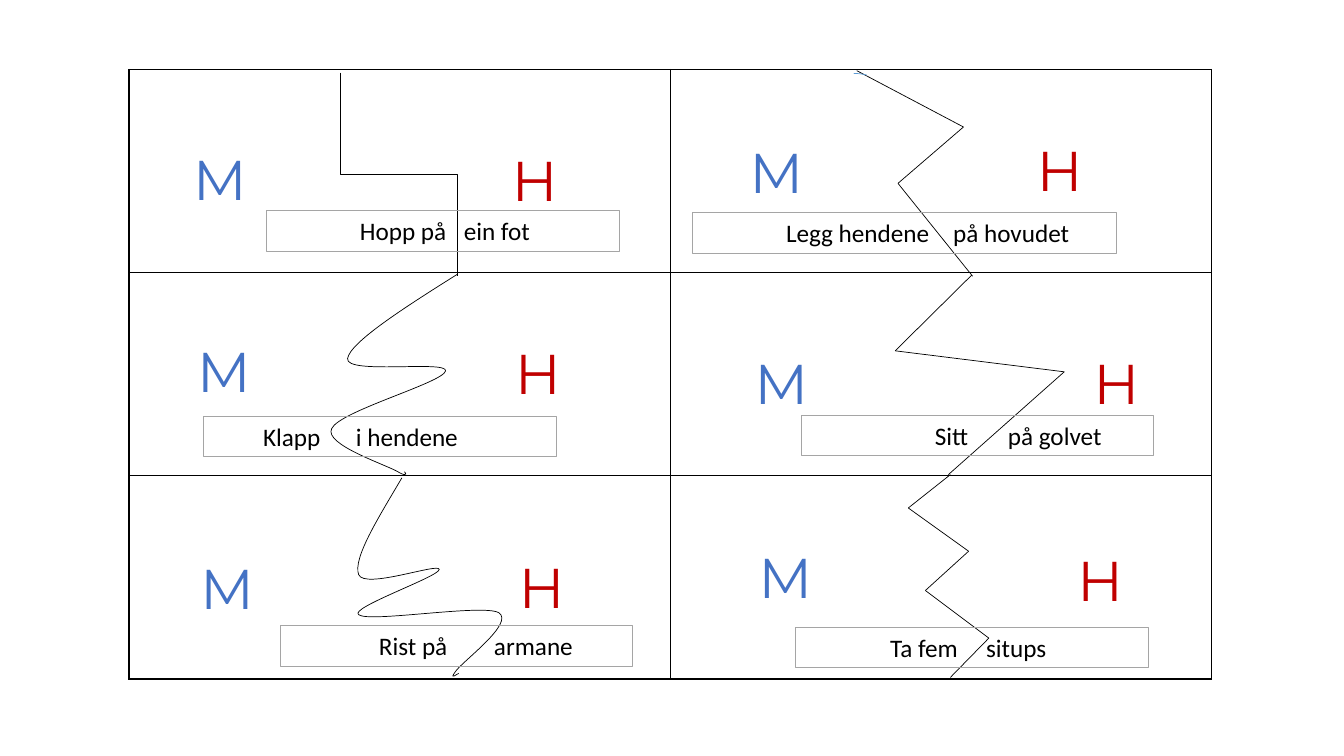
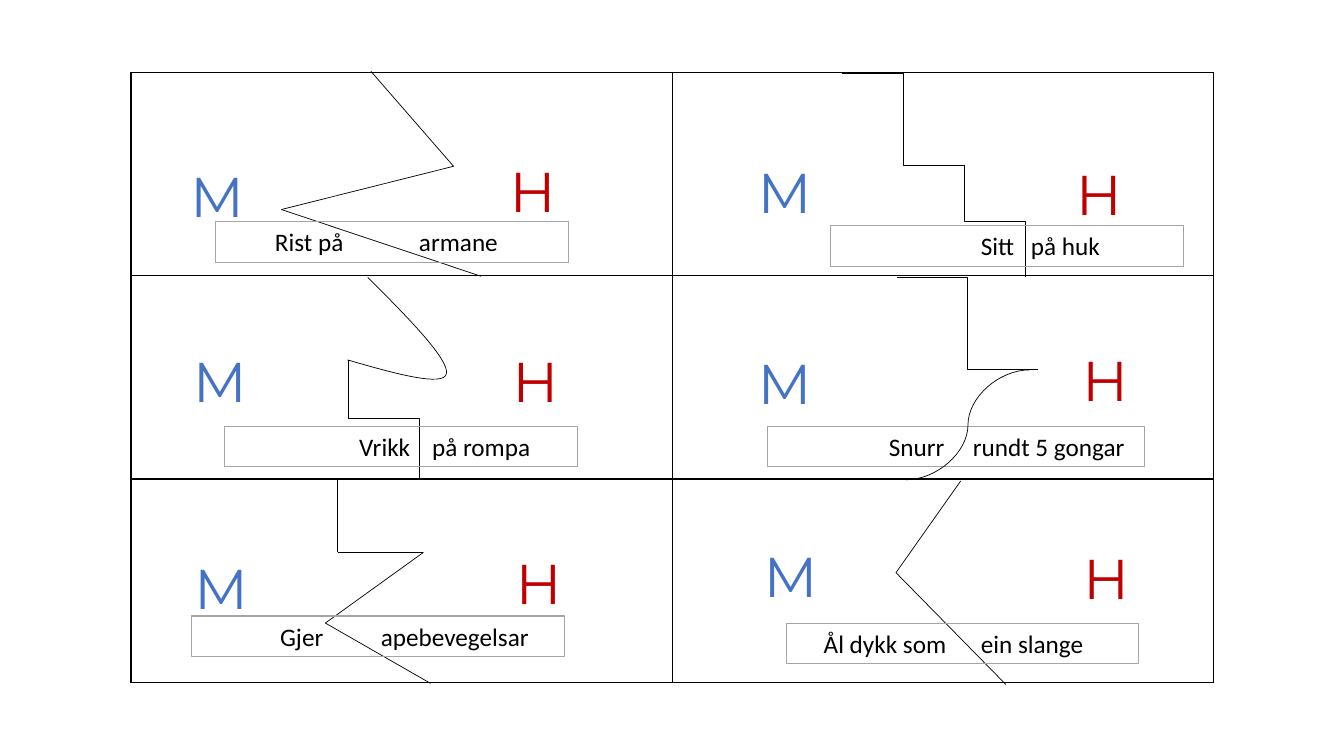
from dataclasses import dataclass

from lxml import etree
from pptx import Presentation
from pptx.dml.color import RGBColor
from pptx.enum.shapes import MSO_CONNECTOR, MSO_SHAPE
from pptx.enum.text import MSO_ANCHOR, MSO_AUTO_SIZE, PP_ALIGN
from pptx.oxml.ns import qn
from pptx.util import Cm, Pt

STRAIGHT, ELBOW, CURVE = MSO_CONNECTOR.STRAIGHT, MSO_CONNECTOR.ELBOW, MSO_CONNECTOR.CURVE
RECTANGLE, ARC = MSO_SHAPE.RECTANGLE, MSO_SHAPE.ARC
TOP, LEFT, FIT_SHAPE = MSO_ANCHOR.TOP, PP_ALIGN.LEFT, MSO_AUTO_SIZE.SHAPE_TO_FIT_TEXT
BLACK, BLUE, RED, GREY, LIGHT_BLUE = "000000", "4472C4", "C00000", "A5A5A5", "5B9BD5"
COLUMN_WIDTH, ROW_HEIGHT = 13.64, 5.12
LETTER_HEIGHT, M_WIDTH, H_WIDTH = 1.96, 3.05, 2.26
CAPTION_HEIGHT = 1.02
QUARTER_TURN_BACK = "16200000"


@dataclass
class Card:
    """One puzzle card: two letters and a caption that the cut line divides."""
    m_at: tuple
    h_at: tuple
    caption_at: tuple
    words: tuple
    words_at: tuple
    width: float = 8.89
    line_width: float = 0.5


FIRST_CARDS = [
    Card((4.62, 3.51), (12.65, 3.53), (6.71, 5.31), ("Hopp på", "ein fot"), (9.07, 11.69)),
    Card((18.64, 3.35), (25.88, 3.3), (17.45, 5.36), ("Legg hendene", "på hovudet"),
         (19.81, 24.02), width=10.69),
    Card((4.72, 8.36), (12.73, 8.41), (5.13, 10.49), ("Klapp", "i hendene"), (6.63, 8.97)),
    Card((18.77, 8.66), (27.31, 8.66), (20.19, 10.46), ("Sitt", "på golvet"), (23.56, 25.4)),
    Card((4.8, 13.82), (12.83, 13.79), (7.06, 15.77), ("Rist på", "armane"), (9.55, 12.45)),
    Card((18.87, 13.54), (26.9, 13.61), (20.04, 15.8), ("Ta fem", "situps"), (22.43, 24.85)),
]
SECOND_CARDS = [
    Card((4.55, 3.94), (12.6, 3.81), (5.44, 5.59), ("Rist på", "armane"), (6.93, 10.56)),
    Card((18.85, 3.84), (26.87, 3.89), (20.93, 5.69), ("Sitt", "på huk"), (24.72, 25.98)),
    Card((4.62, 8.61), (12.67, 8.61), (5.66, 10.74), ("Vrikk", "på rompa"), (9.05, 10.89)),
    Card((18.85, 8.66), (27.03, 8.59), (19.33, 10.74), ("Snurr", "rundt 5 gongar"),
         (22.4, 24.52), width=9.5),
    Card((4.65, 13.82), (12.75, 13.69), (4.83, 15.52), ("Gjer", "apebevegelsar"),
         (7.06, 9.6), width=9.4, line_width=1),
    Card((19, 13.51), (27.05, 13.56), (19.81, 15.7), ("Ål dykk som", "ein slange"),
         (20.76, 24.72)),
]
FIRST_ZIGZAGS = [
    [(21.59, 1.78), (24.28, 3.2), (22.63, 4.62), (24.51, 6.96)],
    [(24.49, 6.93), (22.56, 8.84), (26.82, 9.37), (23.9, 11.96)],
    [(23.95, 11.96), (22.89, 12.8), (24.41, 13.89), (23.32, 14.88), (24.92, 16.08),
     (23.95, 17.07)],
]
SECOND_ZIGZAGS = [
    [(9.35, 1.8), (11.43, 4.19), (7.09, 5.28), (12.12, 6.96)],
    [(8.51, 12.09), (8.51, 13.92), (10.67, 13.92), (8.2, 15.7), (10.85, 17.22)],
    [(24.21, 12.12), (22.58, 14.43), (25.35, 17.25)],
]
FIRST_WAVES = [
    [(11.53, 6.91), (10.16, 7.77), (8.81, 8.64), (8.76, 9.04),
     (8.71, 9.45), (11.3, 9.07), (11.23, 9.35),
     (11.15, 9.65), (8.56, 10.36), (8.36, 10.8),
     (8.15, 11.2), (9.73, 11.71), (10.03, 11.89),
     (10.34, 12.07), (10.19, 11.86), (10.19, 11.89)],
    [(10.13, 12.04), (9.53, 13.06), (8.89, 14.07), (9.04, 14.48),
     (9.19, 14.86), (11.07, 14.17), (11.07, 14.35),
     (11.07, 14.53), (8.79, 15.32), (9.04, 15.49),
     (9.3, 15.7), (12.17, 15.21), (12.57, 15.44),
     (12.98, 15.7), (11.66, 16.66), (11.48, 16.92),
     (11.3, 17.17), (11.53, 16.97), (11.56, 16.97)],
]
SECOND_WAVES = [
    [(9.27, 6.99), (10.31, 8.03), (11.33, 9.07), (11.25, 9.42),
     (11.18, 9.75), (9.96, 9.42), (8.76, 9.07)],
]


def color(hex_code):
    """Turn a hex string into a colour."""
    return RGBColor.from_string(hex_code)


def set_line(line, hex_code=BLACK, width=0.5):
    """Give a line its colour and width."""
    line.color.rgb = color(hex_code)
    line.width = Pt(width)


def set_outline_only(shape, hex_code=BLACK, width=0.5):
    """Leave a shape without fill or shadow and draw its outline."""
    shape.shadow.inherit = False
    shape.fill.background()
    set_line(shape.line, hex_code, width)


def set_border(cell):
    """Draw a thin black border on all sides of a cell."""
    properties = cell._tc.get_or_add_tcPr()
    for index, side in enumerate(("a:lnL", "a:lnR", "a:lnT", "a:lnB")):
        border = etree.Element(qn(side), w=str(Pt(1)))
        fill = etree.SubElement(border, qn("a:solidFill"))
        etree.SubElement(fill, qn("a:srgbClr"), val=BLACK)
        properties.insert(index, border)


def add_grid(slide, left, top):
    """Add the table that frames the six cards."""
    frame = slide.shapes.add_table(3, 2, Cm(left), Cm(top),
                                   Cm(2 * COLUMN_WIDTH), Cm(3 * ROW_HEIGHT))
    table = frame.table
    table.first_row = table.horz_banding = False
    for cell in table.iter_cells():
        cell.fill.background()
        set_border(cell)


def add_line(slide, kind, start, end):
    """Add a thin black connector."""
    connector = slide.shapes.add_connector(kind, *map(Cm, start + end))
    set_line(connector.line)
    etree.SubElement(connector._element.spPr, qn("a:effectLst"))
    return connector


def add_zigzag(slide, points):
    """Join points with straight lines."""
    for start, end in zip(points, points[1:]):
        add_line(slide, STRAIGHT, start, end)


def add_vertical_elbow(slide, start, end):
    """Add an elbow that leaves downwards, as a turned connector."""
    middle_x, middle_y = (start[0] + end[0]) / 2, (start[1] + end[1]) / 2
    half_width, half_height = (end[0] - start[0]) / 2, (end[1] - start[1]) / 2
    connector = add_line(slide, ELBOW,
                         (middle_x + half_height, middle_y - half_width),
                         (middle_x - half_height, middle_y + half_width))
    connector._element.spPr.find(qn("a:xfrm")).set("rot", QUARTER_TURN_BACK)


def add_wave(slide, points):
    """Add a freeform of cubic curves, three points to each curve."""
    start, *others = [(Cm(x), Cm(y)) for x, y in points]
    builder = slide.shapes.build_freeform(*start)
    builder.add_line_segments(others, close=False)
    shape = builder.convert_to_shape()
    set_outline_only(shape)
    outline = next(shape._element.iter(qn("a:path")))
    segments = outline.findall(qn("a:lnTo"))
    for index in range(0, len(segments), 3):
        curve = etree.SubElement(outline, qn("a:cubicBezTo"))
        for segment in segments[index:index + 3]:
            curve.append(segment[0])
            outline.remove(segment)


def add_arc(slide):
    """Add the short blue arc at the top of the first slide."""
    arc = slide.shapes.add_shape(ARC, Cm(19.76), Cm(1.85), Cm(3.51), Cm(4.85))
    arc.adjustments[0], arc.adjustments[1] = 162, 166.78
    set_outline_only(arc, LIGHT_BLUE)


def write_text(shape, text, font_name, size, hex_code):
    """Write one left-aligned paragraph and return it."""
    frame = shape.text_frame
    frame.word_wrap = True
    frame.auto_size = FIT_SHAPE
    frame.vertical_anchor = TOP
    paragraph = frame.paragraphs[0]
    paragraph.text = text
    paragraph.alignment = LEFT
    paragraph.font.name = font_name
    paragraph.font.size = Pt(size)
    paragraph.font.color.rgb = color(hex_code)
    return paragraph


def add_letter(slide, letter, position, width, hex_code):
    """Add one large letter."""
    box = slide.shapes.add_textbox(*map(Cm, position), Cm(width), Cm(LETTER_HEIGHT))
    write_text(box, letter, "Montserrat", 40, hex_code)


def add_caption(slide, card):
    """Add the framed caption, with a tab stop across the cut line."""
    shape = slide.shapes.add_shape(RECTANGLE, *map(Cm, card.caption_at),
                                   Cm(card.width), Cm(CAPTION_HEIGHT))
    set_outline_only(shape, GREY, card.line_width)
    first, second = card.words_at
    shape.text_frame.margin_left = Cm(first - card.caption_at[0])
    shape.text_frame.margin_right = 0
    paragraph = write_text(shape, "\t".join(card.words), "Calibri", 18, BLACK)
    tabs = etree.Element(qn("a:tabLst"))
    etree.SubElement(tabs, qn("a:tab"), pos=str(Cm(second - first)), algn="l")
    paragraph._p.get_or_add_pPr().insert(0, tabs)


def add_cards(slide, cards):
    """Add the letters and then the captions of all cards."""
    for card in cards:
        add_letter(slide, "M", card.m_at, M_WIDTH, BLUE)
        add_letter(slide, "H", card.h_at, H_WIDTH, RED)
    for card in cards:
        add_caption(slide, card)


def add_sheet(presentation, grid_at, zigzags, waves, vertical_elbows, cards):
    """Add a slide with its grid, cut lines and cards."""
    slide = presentation.slides.add_slide(presentation.slide_layouts[6])
    add_grid(slide, *grid_at)
    for points in zigzags:
        add_zigzag(slide, points)
    for points in waves:
        add_wave(slide, points)
    for start, end in vertical_elbows:
        add_vertical_elbow(slide, start, end)
    add_cards(slide, cards)
    return slide


def main():
    """Build both sheets of cards."""
    presentation = Presentation()
    presentation.slide_width, presentation.slide_height = Cm(33.87), Cm(19.05)
    first = add_sheet(presentation, (3.25, 1.75), FIRST_ZIGZAGS, FIRST_WAVES,
                      [((8.59, 1.83), (11.53, 6.96))], FIRST_CARDS)
    add_arc(first)
    second = add_sheet(presentation, (3.3, 1.83), SECOND_ZIGZAGS, SECOND_WAVES,
                       [((24.31, 4.17), (25.83, 6.99)), ((8.79, 9.07), (10.57, 12.04))],
                       SECOND_CARDS)
    add_line(second, ELBOW, (21.21, 1.85), (24.31, 4.17))
    add_line(second, ELBOW, (22.61, 6.99), (26.16, 9.3))
    add_line(second, CURVE, (25.96, 9.32), (22.83, 12.09))
    presentation.save("out.pptx")


if __name__ == "__main__":
    main()
